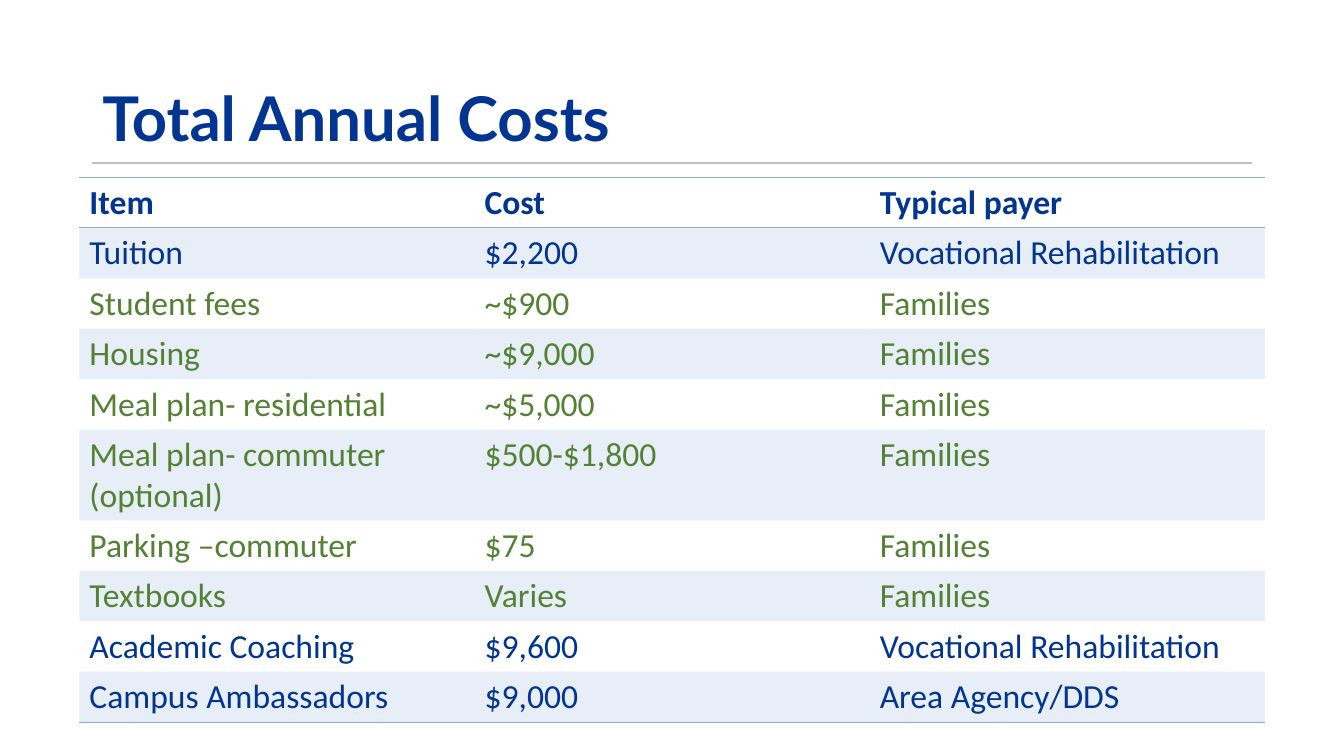
from dataclasses import dataclass

import lxml.etree
import pptx
import pptx.dml.color
import pptx.enum.shapes
import pptx.enum.text
import pptx.oxml.ns
import pptx.util

Pt = pptx.util.Pt
qn = pptx.oxml.ns.qn
NAVY, GREEN, BLUE, GREY = "013591", "548235", "8EAADB", "BFBFBF"
NO_STYLE = "{2D5ABB26-0587-4C30-8999-92F81FD0307C}"


@dataclass
class Row:
    item: str
    cost: str
    payer: str
    color: str = GREEN
    bold: bool = False


ROWS = [
    Row("Item", "Cost", "Typical payer", NAVY, True),
    Row("Tuition", "$2,200", "Vocational Rehabilitation", NAVY),
    Row("Student fees", "~$900", "Families"),
    Row("Housing", "~$9,000", "Families"),
    Row("Meal plan- residential", "~$5,000", "Families"),
    Row("Meal plan- commuter (optional)", "$500-$1,800", "Families"),
    Row("Parking –commuter", "$75", "Families"),
    Row("Textbooks", "Varies", "Families"),
    Row("Academic Coaching", "$9,600", "Vocational Rehabilitation", NAVY),
    Row("Campus Ambassadors", "$9,000", "Area Agency/DDS", NAVY),
]


def rgb(color: str) -> pptx.dml.color.RGBColor:
    return pptx.dml.color.RGBColor.from_string(color)


def add_run(p, text: str, font: str, size: float, color: str, bold: bool) -> None:
    r = p.add_run()
    r.text = text
    r.font.name = font
    r.font.size = Pt(size)
    r.font.bold = bold
    r.font.color.rgb = rgb(color)


def add_border(cell, side: str) -> None:
    tc_pr = cell._tc.get_or_add_tcPr()
    ln = lxml.etree.SubElement(tc_pr, qn(f"a:{side}"), w=str(Pt(1)))
    fill = lxml.etree.SubElement(ln, qn("a:solidFill"))
    lxml.etree.SubElement(fill, qn("a:srgbClr"), val=BLUE)


def fill_band(cell) -> None:
    cell.fill.solid()
    cell.fill.fore_color.rgb = rgb(BLUE)
    clr = cell._tc.tcPr.find(qn("a:solidFill")).find(qn("a:srgbClr"))
    lxml.etree.SubElement(clr, qn("a:alpha"), val="20000")


def add_title(s, text: str) -> None:
    sp = s.shapes.add_textbox(Pt(66), Pt(45.5), Pt(829), Pt(68.5))
    tf = sp.text_frame
    tf.word_wrap = True
    tf.vertical_anchor = pptx.enum.text.MSO_ANCHOR.BOTTOM
    p = tf.paragraphs[0]
    p.line_spacing = 0.9
    add_run(p, text, "Lato", 44, NAVY, True)


def add_rule(s) -> None:
    sp = s.shapes.add_connector(
        pptx.enum.shapes.MSO_CONNECTOR.STRAIGHT, Pt(66), Pt(116.5), Pt(894), Pt(116.5)
    )
    sp.line.color.rgb = rgb(GREY)
    sp.line.width = Pt(1)
    lxml.etree.SubElement(sp._element.spPr, qn("a:effectLst"))


def add_costs(s, rows: list[Row]) -> None:
    sp = s.shapes.add_table(
        len(rows), 3, Pt(56.7), Pt(126.7), Pt(846.9), Pt(29.2 * len(rows))
    )
    table = sp.table
    table.first_row = False
    table.horz_banding = False
    table._tbl.tblPr.find(qn("a:tableStyleId")).text = NO_STYLE
    for i, row in enumerate(rows):
        for j, text in enumerate((row.item, row.cost, row.payer)):
            cell = table.cell(i, j)
            add_run(
                cell.text_frame.paragraphs[0], text, "Calibri", 24, row.color, row.bold
            )
            if i == 0:
                add_border(cell, "lnT")
            if i in (0, len(rows) - 1):
                add_border(cell, "lnB")
            if i % 2:
                fill_band(cell)
            else:
                cell.fill.background()


def main() -> None:
    prs = pptx.Presentation()
    prs.slide_width, prs.slide_height = Pt(960), Pt(540)
    s = prs.slides.add_slide(prs.slide_layouts[6])
    add_rule(s)
    add_title(s, "Total Annual Costs")
    add_costs(s, ROWS)
    prs.save("out.pptx")


if __name__ == "__main__":
    main()
